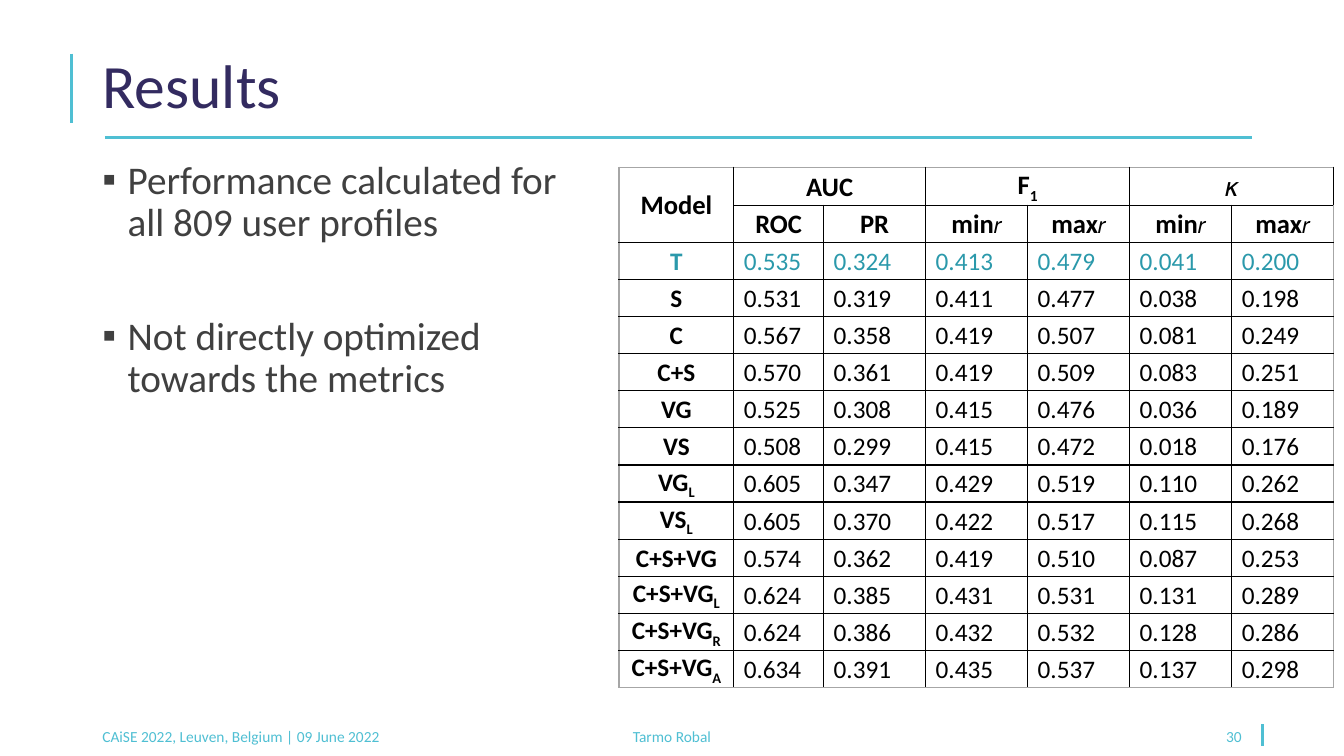
from dataclasses import dataclass

from lxml.etree import SubElement
from pptx import Presentation
from pptx.dml.color import RGBColor
from pptx.enum.shapes import MSO_CONNECTOR
from pptx.enum.text import MSO_ANCHOR, MSO_AUTO_SIZE, PP_ALIGN
from pptx.oxml.ns import qn
from pptx.util import Emu, Inches, Pt


@dataclass(frozen=True)
class Theme:
    font: str = "Calibri"
    title: str = "332B60"
    body: str = "404040"
    accent: str = "4FBFD3"
    highlight: str = "2B99AB"
    ink: str = "000000"
    frame: str = "A6A6A6"
    title_size: int = 44
    body_size: int = 28
    head_size: int = 19
    cell_size: int = 18
    symbol_size: int = 16
    foot_size: int = 11


THEME = Theme()
WIDTH, HEIGHT = Inches(13.333), Inches(7.5)
GRID_COLS, GRID_ROWS = 160, 90

BULLETS = [
    ("Performance calculated for all 809 user profiles", 10),
    ("Not directly optimized towards the metrics", 51),
]
FOOTERS = [
    (53, 54, "Tarmo Robal", PP_ALIGN.CENTER),
    (11, 39.7, "CAiSE 2022, Leuven, Belgium | 09 June 2022", PP_ALIGN.LEFT),
    (113, 36, "30", PP_ALIGN.RIGHT),
]
RULES = [
    (8.5, 6.4, 8.5, 14.6),
    (150.25, 86.25, 150.25, 88.8),
    (12.5, 16.4, 149, 16.4),
]
GROUPS = ["AUC", "F_1", "𝜅"]
METRICS = ["ROC", "PR", "min𝑟", "max𝑟", "min𝑟", "max𝑟"]
RESULTS = [
    ("T", "0.535 0.324 0.413 0.479 0.041 0.200"),
    ("S", "0.531 0.319 0.411 0.477 0.038 0.198"),
    ("C", "0.567 0.358 0.419 0.507 0.081 0.249"),
    ("C+S", "0.570 0.361 0.419 0.509 0.083 0.251"),
    ("VG", "0.525 0.308 0.415 0.476 0.036 0.189"),
    ("VS", "0.508 0.299 0.415 0.472 0.018 0.176"),
    ("VG_L", "0.605 0.347 0.429 0.519 0.110 0.262"),
    ("VS_L", "0.605 0.370 0.422 0.517 0.115 0.268"),
    ("C+S+VG", "0.574 0.362 0.419 0.510 0.087 0.253"),
    ("C+S+VG_L", "0.624 0.385 0.431 0.531 0.131 0.289"),
    ("C+S+VG_R", "0.624 0.386 0.432 0.532 0.128 0.286"),
    ("C+S+VG_A", "0.634 0.391 0.435 0.537 0.137 0.298"),
]
MODEL_COL = 13.65
METRIC_COLS = [10.7] + [12.15] * 5
TABLE_ROW = 4.42


def gx(cols):
    return Emu(round(WIDTH * cols / GRID_COLS))


def gy(rows):
    return Emu(round(HEIGHT * rows / GRID_ROWS))


def place(sp, x, y, w, h):
    sp.left, sp.top, sp.width, sp.height = gx(x), gy(y), gx(w), gy(h)


def add_run(p, text, size, color, bold=False, subscript=False):
    r = p.add_run()
    r.text = text
    r.font.name = THEME.font
    r.font.size = Pt(size)
    r.font.bold = bold
    r.font.color.rgb = RGBColor.from_string(color)
    if subscript:
        r.font._element.set("baseline", "-25000")


def add_title(s, text):
    sp = s.shapes.title
    place(sp, 11, 4.8, 138, 11.6)
    tf = sp.text_frame
    tf.auto_size = MSO_AUTO_SIZE.NONE
    tf.vertical_anchor = MSO_ANCHOR.MIDDLE
    p = tf.paragraphs[0]
    p.alignment = PP_ALIGN.LEFT
    p.line_spacing = 0.9
    add_run(p, text, THEME.title_size, THEME.title)


def add_bullets(s, items):
    sp = s.placeholders[1]
    place(sp, 11, 18.5, 60, 66.4)
    tf = sp.text_frame
    tf.auto_size = MSO_AUTO_SIZE.NONE
    for i, (text, before) in enumerate(items):
        p = tf.add_paragraph() if i else tf.paragraphs[0]
        p.line_spacing = 0.9
        p.space_before = Pt(before)
        pPr = p._p.get_or_add_pPr()
        pPr.set("marL", str(Inches(0.25)))
        pPr.set("indent", str(Inches(-0.25)))
        SubElement(pPr, qn("a:buChar"), char="▪")
        add_run(p, text, THEME.body_size, THEME.body)


def add_rule(s, x1, y1, x2, y2):
    line = s.shapes.add_connector(
        MSO_CONNECTOR.STRAIGHT, gx(x1), gy(y1), gx(x2), gy(y2))
    line.line.color.rgb = RGBColor.from_string(THEME.accent)
    line.line.width = Pt(2.25)
    SubElement(line._element.spPr, qn("a:effectLst"))


def add_footer(s, x, w, text, align):
    tf = s.shapes.add_textbox(gx(x), gy(86.25), gx(w), gy(2.75)).text_frame
    tf.word_wrap = True
    tf.vertical_anchor = MSO_ANCHOR.MIDDLE
    p = tf.paragraphs[0]
    p.alignment = align
    add_run(p, text, THEME.foot_size, THEME.accent)


def set_borders(cell, colors):
    """Draw the left, right, top and bottom edges in the given colours."""
    tcPr = cell._tc.get_or_add_tcPr()
    for side, color in zip("LRTB", colors):
        ln = SubElement(tcPr, qn(f"a:ln{side}"), w=str(Pt(1)))
        fill = SubElement(ln, qn("a:solidFill"))
        SubElement(fill, qn("a:srgbClr"), val=color)


def fill_cell(cell, text, size, color=THEME.ink, bold=True,
              align=PP_ALIGN.CENTER):
    """Write text, where _ starts a subscript and 𝑟 is set smaller."""
    p = cell.text_frame.paragraphs[0]
    p.alignment = align
    p.line_spacing = 1.05
    base, _, sub = text.partition("_")
    word = base.removesuffix("𝑟")
    add_run(p, word, size, color, bold)
    if word != base:
        add_run(p, "𝑟", THEME.symbol_size, color, bold)
    if sub:
        add_run(p, sub, size, color, bold, subscript=True)


def add_results_table(s):
    widths = [MODEL_COL] + METRIC_COLS
    n_rows, n_cols = len(RESULTS) + 2, len(widths)
    table = s.shapes.add_table(
        n_rows, n_cols, gx(73.7), gy(19.9),
        gx(sum(widths)), gy(TABLE_ROW * n_rows)).table
    table.first_row = table.horz_banding = False
    for col, width in zip(table.columns, widths):
        col.width = gx(width)
    for i, row in enumerate(table.rows):
        row.height = gy(TABLE_ROW)
        for j, cell in enumerate(row.cells):
            outer = (j == 0, j == n_cols - 1, i == 0, i == n_rows - 1)
            set_borders(cell, [THEME.frame if o else THEME.ink for o in outer])
            cell.fill.background()
            cell.vertical_anchor = MSO_ANCHOR.MIDDLE
            cell.margin_top = cell.margin_bottom = 0

    table.cell(0, 0).merge(table.cell(1, 0))
    fill_cell(table.cell(0, 0), "Model", THEME.head_size)
    for k, group in enumerate(GROUPS):
        first = 1 + 2 * k
        table.cell(0, first).merge(table.cell(0, first + 1))
        fill_cell(table.cell(0, first), group, THEME.head_size)
    for j, metric in enumerate(METRICS, 1):
        fill_cell(table.cell(1, j), metric, THEME.head_size)
    for i, (model, values) in enumerate(RESULTS, 2):
        color = THEME.highlight if model == "T" else THEME.ink
        fill_cell(table.cell(i, 0), model, THEME.cell_size, color)
        for j, value in enumerate(values.split(), 1):
            fill_cell(table.cell(i, j), value, THEME.cell_size, color,
                      bold=False, align=PP_ALIGN.LEFT)


def main():
    prs = Presentation()
    prs.slide_width, prs.slide_height = WIDTH, HEIGHT
    s = prs.slides.add_slide(prs.slide_layouts[1])
    for rule in RULES:
        add_rule(s, *rule)
    add_title(s, "Results")
    add_bullets(s, BULLETS)
    for footer in FOOTERS:
        add_footer(s, *footer)
    add_results_table(s)
    prs.save("out.pptx")


if __name__ == "__main__":
    main()
